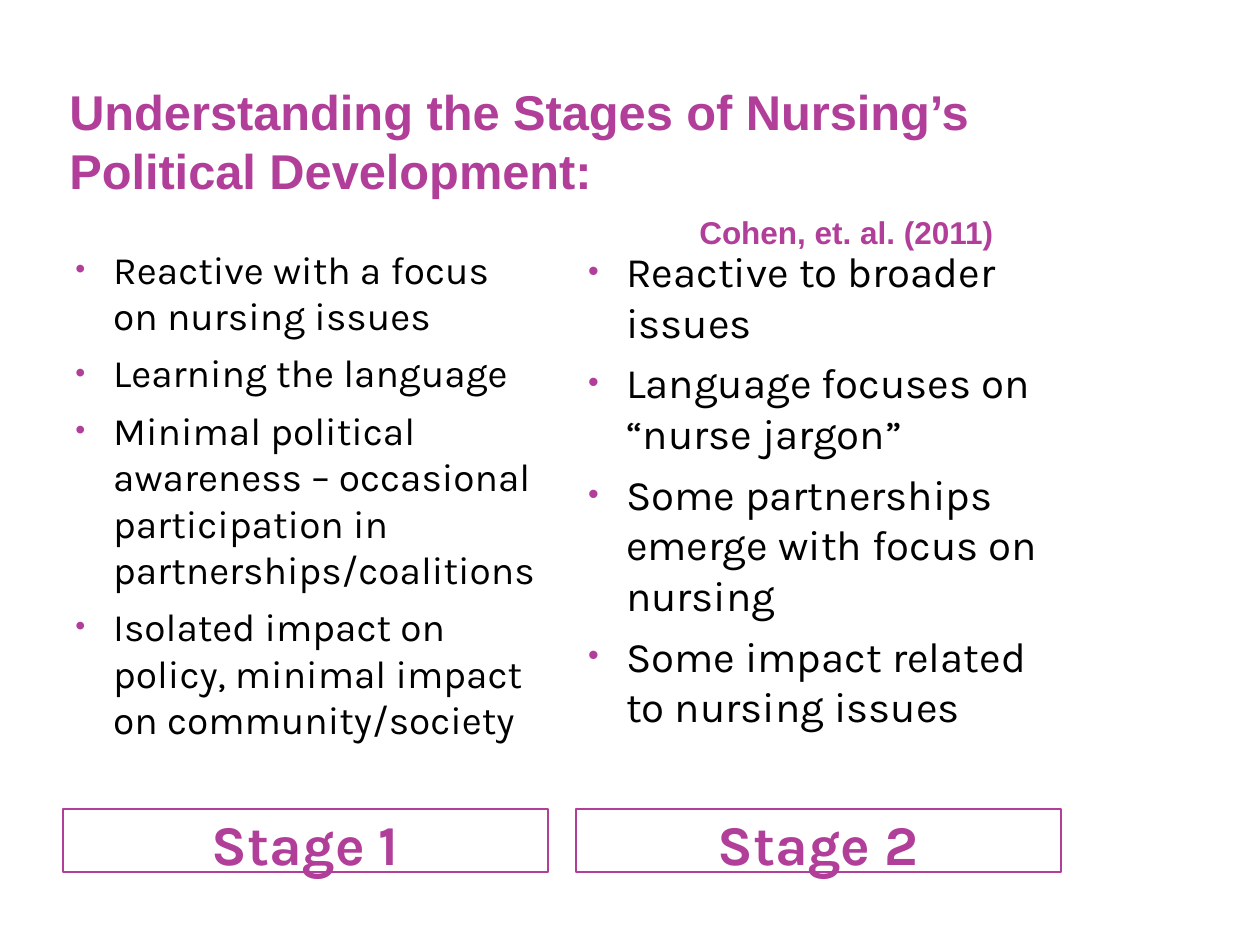
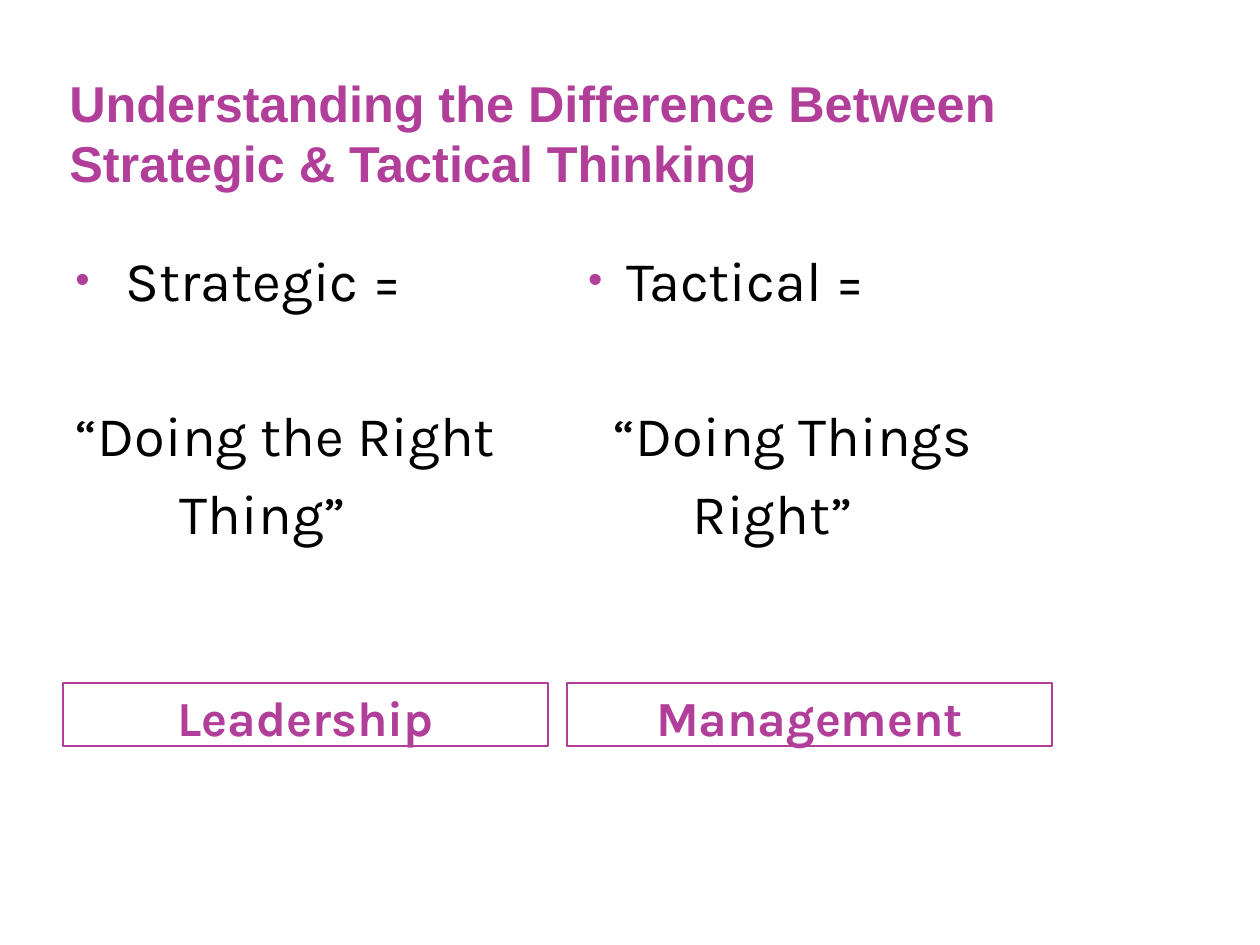
"""Build two slides comparing stages of political development and kinds of thinking."""
from lxml.etree import SubElement
from pptx import Presentation
from pptx.dml.color import RGBColor
from pptx.enum.shapes import MSO_SHAPE
from pptx.enum.text import MSO_ANCHOR, MSO_AUTO_SIZE, PP_ALIGN
from pptx.oxml.ns import qn
from pptx.util import Pt

PX = 9144
ACCENT, INK = "B13F9A", "000000"
LEFT, COL_W, COL_X = 50, 385, (50, 457)


def style(p, size, color, font="Karla", bold=False, before=0, align=PP_ALIGN.LEFT):
    p.alignment = align
    p.line_spacing = Pt(round(size * 1.2, 1))
    p.space_before = Pt(before)
    for r in p.runs:
        r.font.size, r.font.name, r.font.bold = Pt(size), font, bold
        r.font.color.rgb = RGBColor.from_string(color)


def indent(p, margin, bullet):
    pPr = p._p.get_or_add_pPr()
    pPr.set("marL", str(margin * PX))
    pPr.set("indent", str(-margin * PX if bullet else 0))
    if bullet:
        SubElement(SubElement(pPr, qn("a:buClr")), qn("a:srgbClr"), val=ACCENT)
        SubElement(pPr, qn("a:buSzPct"), val="73000")
        SubElement(pPr, qn("a:buFont"), typeface="Arial")
        SubElement(pPr, qn("a:buChar"), char="•")
    else:
        SubElement(pPr, qn("a:buNone"))


slides = [
    {
        "title": "Understanding the Stages of Nursing’s Political Development:",
        "title_size": 27.9, "title_bottom": 1, "citation": "Cohen, et. al. (2011)",
        "label_y": 642, "label_x": COL_X, "label_size": 32,
        "labels": ("Stage 1", "Stage 2"),
        "sizes": (22.2, 24),
        "columns": (
            [(text, 30, True, 6) for text in (
                "Reactive with a focus on nursing issues",
                "Learning the language",
                "Minimal political awareness – occasional participation in partnerships/coalitions",
                "Isolated impact on policy, minimal impact on community/society")],
            [(text, 30, True, 6) for text in (
                "Reactive to broader issues",
                "Language focuses on “nurse jargon”",
                "Some partnerships emerge with focus on nursing",
                "Some impact related to nursing issues")],
        ),
    },
    {
        "title": "Understanding the Difference Between Strategic & Tactical Thinking",
        "title_size": 28.8, "title_bottom": 47, "citation": None,
        "label_y": 542, "label_x": (50, 450), "label_size": 28,
        "labels": ("Leadership", "Management"),
        "sizes": (32, 32),
        "columns": (
            [("Strategic =", 40, True, 0), ("“Doing the Right", 0, False, 50),
             ("Thing”", 83, False, 6)],
            [("Tactical =", 30, True, 0), ("“Doing Things", 20, False, 50),
             ("Right”", 83, False, 6)],
        ),
    },
]

prs = Presentation()
prs.slide_width, prs.slide_height = 1000 * PX, 750 * PX

for data in slides:
    s = prs.slides.add_slide(prs.slide_layouts[5])
    title = s.shapes.title
    title.left, title.top, title.width, title.height = LEFT * PX, 75 * PX, 792 * PX, 125 * PX
    tf = title.text_frame
    tf.word_wrap, tf.auto_size = True, MSO_AUTO_SIZE.NONE
    tf.vertical_anchor = MSO_ANCHOR.BOTTOM
    tf.margin_left = tf.margin_right = 5 * PX
    tf.margin_top, tf.margin_bottom = 0, data["title_bottom"] * PX
    tf.text = data["title"]
    style(tf.paragraphs[0], data["title_size"], ACCENT, "Arial", True)
    if data["citation"]:
        p = tf.add_paragraph()
        p.text = data["citation"]
        style(p, 18, ACCENT, "Arial", True, before=8)
        indent(p, 500, False)

    for x, label in zip(data["label_x"], data["labels"]):
        sp = s.shapes.add_shape(MSO_SHAPE.RECTANGLE, x * PX, data["label_y"] * PX,
                                COL_W * PX, 50 * PX)
        sp.shadow.inherit = False
        sp.fill.background()
        sp.line.color.rgb = RGBColor.from_string(ACCENT)
        sp.line.width = Pt(1)
        tf = sp.text_frame
        tf.word_wrap, tf.vertical_anchor = True, MSO_ANCHOR.MIDDLE
        tf.margin_top, tf.margin_bottom = 9 * PX, 5 * PX
        tf.text = label
        style(tf.paragraphs[0], data["label_size"], ACCENT, bold=True, align=PP_ALIGN.CENTER)

    for x, size, column in zip(COL_X, data["sizes"], data["columns"]):
        tf = s.shapes.add_textbox(x * PX, 187 * PX, COL_W * PX, 450 * PX).text_frame
        tf.word_wrap, tf.margin_top = True, 8 * PX
        for i, (text, margin, bullet, before) in enumerate(column):
            p = tf.add_paragraph() if i else tf.paragraphs[0]
            p.text = text
            style(p, size, INK, before=before if i else 0)
            indent(p, margin, bullet)

prs.save("out.pptx")
